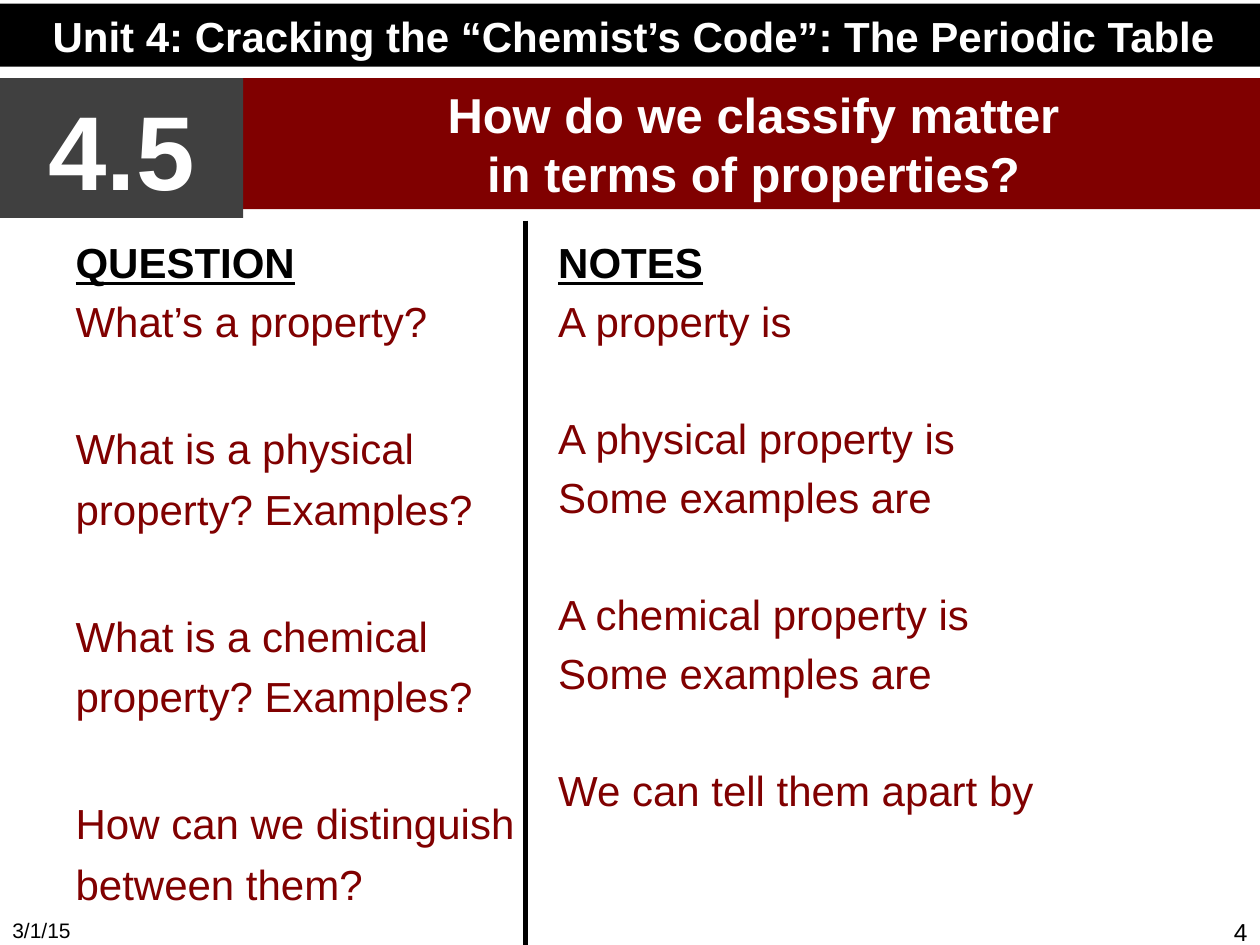
from dataclasses import dataclass

from lxml import etree
from pptx import Presentation
from pptx.dml.color import RGBColor
from pptx.enum.shapes import MSO_CONNECTOR, MSO_SHAPE
from pptx.enum.text import MSO_ANCHOR, MSO_AUTO_SIZE, PP_ALIGN
from pptx.oxml.ns import qn
from pptx.util import Inches, Pt

LEFT, CENTER, RIGHT = PP_ALIGN.LEFT, PP_ALIGN.CENTER, PP_ALIGN.RIGHT
TOP, MIDDLE = MSO_ANCHOR.TOP, MSO_ANCHOR.MIDDLE
NO_AUTOFIT = MSO_AUTO_SIZE.NONE
RECTANGLE, STRAIGHT = MSO_SHAPE.RECTANGLE, MSO_CONNECTOR.STRAIGHT
WIDTH, HEIGHT = 10, 7.5
TWO_CONTENT_LAYOUT = 3


@dataclass(frozen=True)
class Theme:
    """Colours, font and type sizes of the lesson slide."""
    font: str = "Arial"
    black: str = "000000"
    white: str = "FFFFFF"
    gray: str = "404040"
    maroon: str = "800000"
    small: int = 12
    page_number: int = 14
    body: int = 24
    title: int = 28
    lesson: int = 60
    space: float = 4.8
    blank_line: float = 33.2


THEME = Theme()
QUESTIONS = [
    ["What’s a property?"],
    ["What is a physical property? Examples?"],
    ["What is a chemical property? Examples?"],
    ["How can we distinguish between them?"],
]
NOTES = [
    ["A property is"],
    ["A physical property is", "Some examples are"],
    ["A chemical property is", "Some examples are"],
    ["We can tell them apart by"],
]


def place(box, left, top, width, height):
    """Move a box to a position in inches."""
    box.left, box.top = Inches(left), Inches(top)
    box.width, box.height = Inches(width), Inches(height)


def prepare_frame(box, anchor=TOP, margin_top=0.05):
    """Set wrapping, anchor and top margin of a box and return its text frame."""
    frame = box.text_frame
    frame.word_wrap = True
    frame.auto_size = NO_AUTOFIT
    frame.vertical_anchor = anchor
    frame.margin_top = Inches(margin_top)
    return frame


def write(frame, text, size=THEME.body, color=THEME.black, bold=False,
          underline=False, align=LEFT, before=0, spacing=1.0):
    """Write one formatted paragraph, using the empty first one if there is one."""
    para = frame.paragraphs[0]
    if para.runs:
        para = frame.add_paragraph()
    properties = para._p.get_or_add_pPr()
    properties.set("marL", "0")
    properties.set("indent", "0")
    etree.SubElement(properties, qn("a:buNone"))
    para.alignment = align
    para.space_before = Pt(before)
    para.line_spacing = spacing
    span = para.add_run()
    span.text = text
    span.font.name = THEME.font
    span.font.size = Pt(size)
    span.font.bold = bold
    span.font.underline = underline
    span.font.color.rgb = RGBColor.from_string(color)


def fill_banner(box, lines, color, size):
    """Fill a banner and write its centred bold lines."""
    box.fill.solid()
    box.fill.fore_color.rgb = RGBColor.from_string(color)
    frame = prepare_frame(box, MIDDLE)
    for line in lines:
        write(frame, line, size=size, color=THEME.white, bold=True, align=CENTER)


def add_banner(page, area, text, color, size):
    """Add a plain filled rectangle with one line of text."""
    box = page.shapes.add_shape(RECTANGLE, *map(Inches, area))
    box.shadow.inherit = False
    box.line.fill.background()
    fill_banner(box, [text], color, size)


def fill_column(box, area, heading, groups, spacing=1.0):
    """Write a heading and groups of lines set one blank line apart."""
    place(box, *area)
    frame = prepare_frame(box, margin_top=0.08)
    write(frame, heading, bold=True, underline=True)
    for group_index, group in enumerate(groups):
        for line_index, line in enumerate(group):
            starts_group = group_index > 0 and line_index == 0
            gap = THEME.blank_line if starts_group else 0
            write(frame, line, color=THEME.maroon, before=THEME.space + gap,
                  spacing=spacing if group_index else 1.0)


def add_divider(page, x, top, bottom):
    """Add the vertical rule between the two columns."""
    rule = page.shapes.add_connector(
        STRAIGHT, Inches(x), Inches(top), Inches(x), Inches(bottom))
    rule.line.color.rgb = RGBColor.from_string(THEME.black)
    rule.line.width = Pt(3)
    etree.SubElement(rule._element.spPr, qn("a:effectLst"))


def add_footer(page, left, text, size, align):
    """Add a footer text that ends at the bottom of the slide."""
    width, height = WIDTH * 0.233, HEIGHT * 0.036
    box = page.shapes.add_textbox(
        Inches(left * (WIDTH - width)), Inches(HEIGHT - height),
        Inches(width), Inches(height))
    write(prepare_frame(box), text, size=size, align=align)


def main():
    """Build the lesson slide and save it."""
    deck = Presentation()
    deck.slide_width, deck.slide_height = Inches(WIDTH), Inches(HEIGHT)
    page = deck.slides.add_slide(deck.slide_layouts[TWO_CONTENT_LAYOUT])
    title, questions, notes = page.placeholders

    add_footer(page, 0, "3/1/15", THEME.small, LEFT)
    add_footer(page, 1, "4", THEME.page_number, RIGHT)
    add_banner(page, (0, 0.03, 10.06, 0.5),
               "Unit 4: Cracking the “Chemist’s Code”: The Periodic Table",
               THEME.black, THEME.body)
    add_banner(page, (0, 0.62, 1.93, 1.11), "4.5", THEME.gray, THEME.lesson)
    place(title, 1.93, 0.62, 8.1, 1.04)
    fill_banner(title, ["How do we classify matter", "in terms of properties?"],
                THEME.maroon, THEME.title)
    fill_column(questions, (0.5, 1.8, 3.92, 4.95), "QUESTION", QUESTIONS, 1.2)
    fill_column(notes, (4.33, 1.8, 5.67, 4.95), "NOTES", NOTES)
    add_divider(page, 4.17, 1.75, HEIGHT)
    deck.save("out.pptx")


if __name__ == "__main__":
    main()
